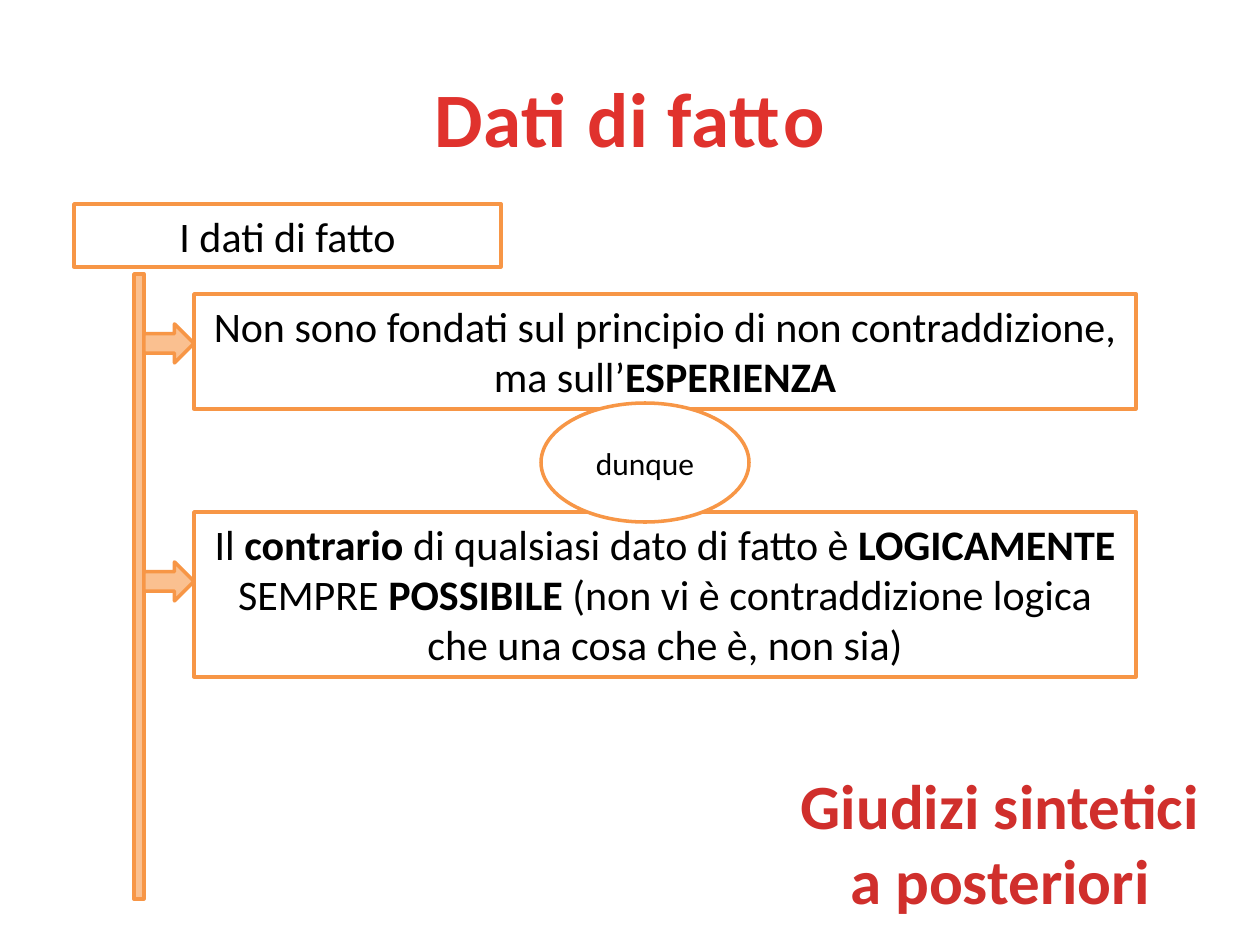
from dataclasses import dataclass

import pptx
import pptx.dml.color
import pptx.enum.shapes
import pptx.enum.text
import pptx.util

PX = 914400 // 126
SHAPE = pptx.enum.shapes.MSO_SHAPE
ANCHOR = pptx.enum.text.MSO_ANCHOR
AUTO_SIZE = pptx.enum.text.MSO_AUTO_SIZE


@dataclass(frozen=True)
class Theme:
    font: str = "Calibri"
    title_color: str = "E0322D"
    verdict_color: str = "D02F2C"
    text_color: str = "000000"
    box_fill: str = "FFFFFF"
    guide_fill: str = "FAC090"
    line: str = "F79646"
    line_width: int = 2
    title_size: int = 44
    verdict_size: int = 36
    body_size: int = 24
    link_size: int = 18


THEME = Theme()


def rgb(color):
    return pptx.dml.color.RGBColor.from_string(color)


def px(*lengths):
    return [pptx.util.Emu(n * PX) for n in lengths]


def write(sp, runs, size, color, anchor=ANCHOR.TOP, grow=False, spacing=0):
    tf = sp.text_frame
    tf.word_wrap = True
    tf.vertical_anchor = anchor
    tf.auto_size = AUTO_SIZE.SHAPE_TO_FIT_TEXT if grow else AUTO_SIZE.NONE
    p = tf.paragraphs[0]
    p.alignment = pptx.enum.text.PP_ALIGN.CENTER
    for text, bold in runs:
        r = p.add_run()
        r.text = text
        r.font.name = THEME.font
        r.font.size = pptx.util.Pt(size)
        r.font.bold = bold
        r.font.color.rgb = rgb(color)
        if spacing:
            r._r.get_or_add_rPr().set("spc", str(spacing))


def add_outlined(s, kind, at, fill):
    sp = s.shapes.add_shape(kind, *px(*at))
    sp.shadow.inherit = False
    sp.fill.solid()
    sp.fill.fore_color.rgb = rgb(fill)
    sp.line.color.rgb = rgb(THEME.line)
    sp.line.width = pptx.util.Pt(THEME.line_width)
    return sp


def add_box(s, at, runs):
    sp = add_outlined(s, SHAPE.RECTANGLE, at, THEME.box_fill)
    write(sp, runs, THEME.body_size, THEME.text_color, grow=True)


def add_link(s, at, text):
    sp = add_outlined(s, SHAPE.OVAL, at, THEME.box_fill)
    write(sp, [(text, False)], THEME.link_size, THEME.text_color, ANCHOR.MIDDLE)


def add_heading(s, at, text, size, color, **layout):
    sp = s.shapes.add_textbox(*px(*at))
    write(sp, [(text, True)], size, color, **layout)


def main():
    prs = pptx.Presentation()
    prs.slide_width, prs.slide_height = px(1260, 945)
    s = prs.slides.add_slide(prs.slide_layouts[6])

    add_heading(s, (63, 38, 1134, 158), "Dati di fatto", THEME.title_size,
                THEME.title_color, anchor=ANCHOR.MIDDLE, spacing=50)

    add_outlined(s, SHAPE.RECTANGLE, (134, 274, 10, 625), THEME.guide_fill)
    for top in (324, 562):
        add_outlined(s, SHAPE.RIGHT_ARROW, (144, top, 50, 39), THEME.guide_fill)

    add_box(s, (74, 204, 427, 63), [("I dati di fatto", False)])
    add_box(s, (194, 294, 942, 115), [
        ("Non sono fondati sul principio di non contraddizione, ma sull’", False),
        ("ESPERIENZA", True),
    ])
    add_box(s, (194, 512, 942, 165), [
        ("Il ", False),
        ("contrario", True),
        (" di qualsiasi dato di fatto è ", False),
        ("LOGICAMENTE", True),
        (" SEMPRE ", False),
        ("POSSIBILE", True),
        (" (non vi è contraddizione logica che una cosa che è, non sia)", False),
    ])
    add_link(s, (541, 403, 208, 119), "dunque")

    add_heading(s, (779, 760, 442, 165), "Giudizi sintetici a posteriori",
                THEME.verdict_size, THEME.verdict_color, grow=True)

    prs.save("out.pptx")


if __name__ == "__main__":
    main()
